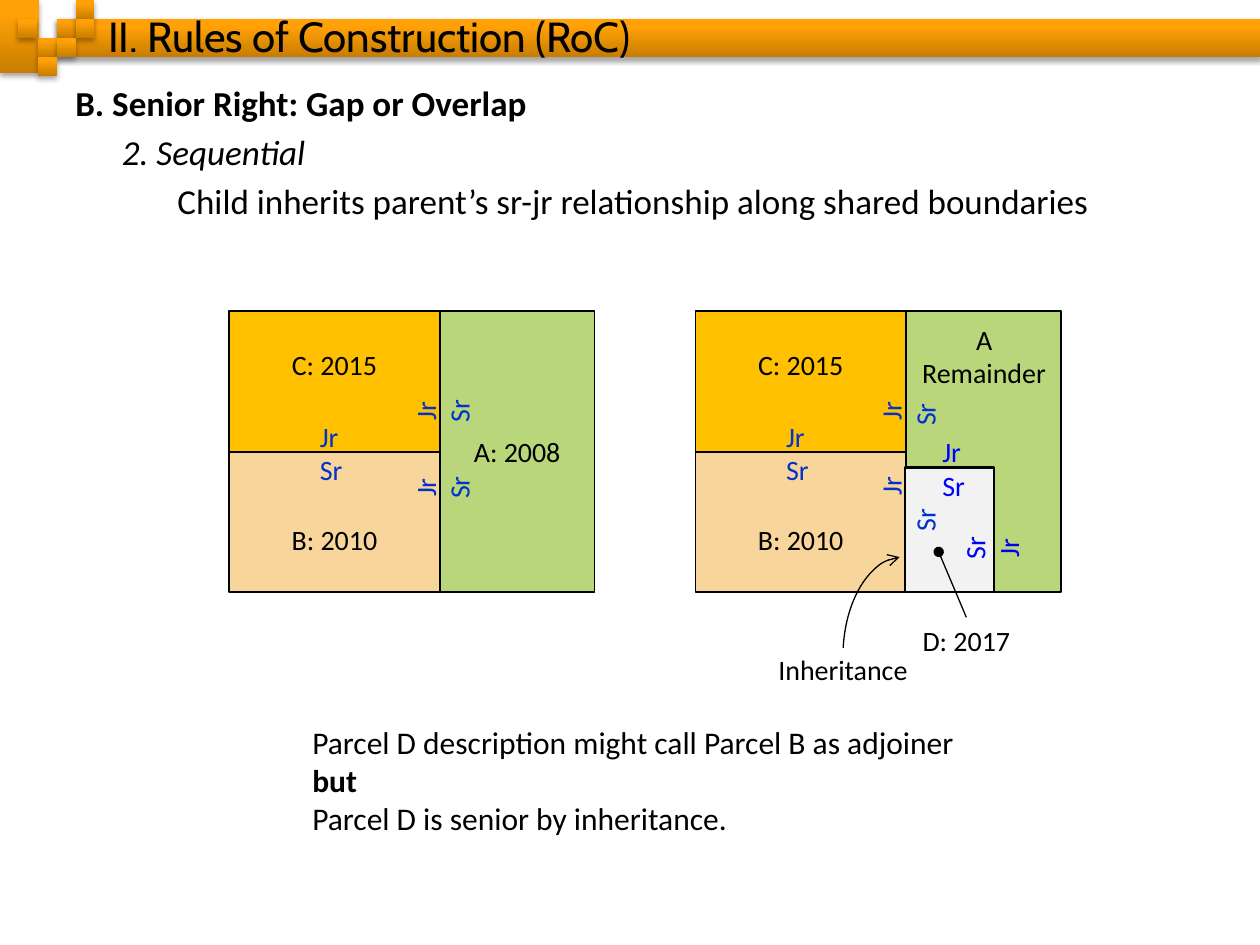
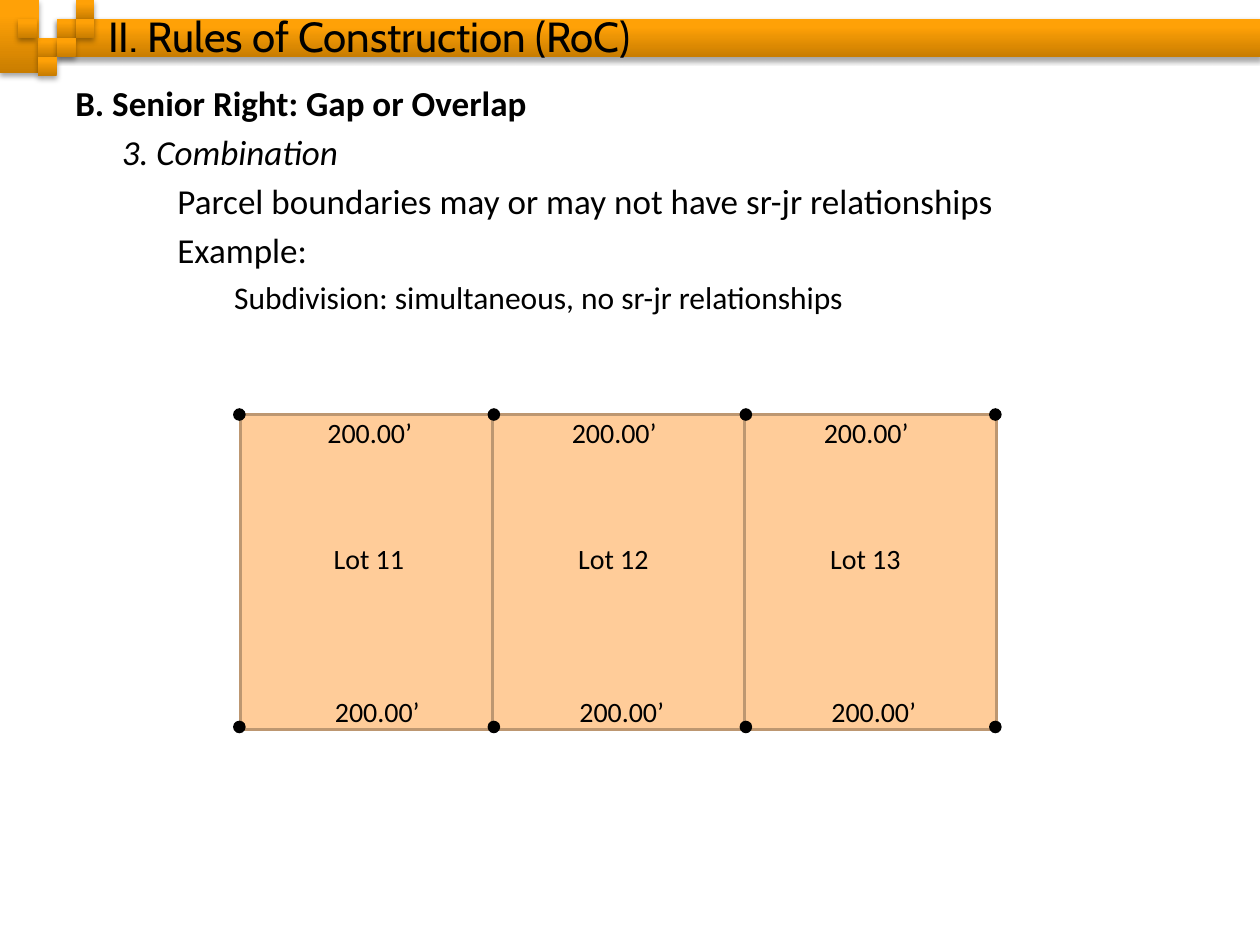
"""Build two slides on senior and junior rights between land parcels."""
from lxml import etree
from pptx import Presentation
from pptx.dml.color import RGBColor
from pptx.enum.shapes import MSO_CONNECTOR, MSO_SHAPE
from pptx.enum.text import MSO_ANCHOR, PP_ALIGN
from pptx.oxml.ns import qn
from pptx.util import Inches, Pt

RECT, OVAL, ARC = MSO_SHAPE.RECTANGLE, MSO_SHAPE.OVAL, MSO_SHAPE.ARC
STRAIGHT = MSO_CONNECTOR.STRAIGHT
LEFT, CENTER = PP_ALIGN.LEFT, PP_ALIGN.CENTER
TOP, MIDDLE = MSO_ANCHOR.TOP, MSO_ANCHOR.MIDDLE

COLORS = {
    "black": "000000",
    "band_dark": "C97D00",
    "band_light": "FFA107",
    "parcel_a": "B9D77A",
    "parcel_b": "F8D59B",
    "parcel_c": "FFC000",
    "parcel_d": "F2F2F2",
    "right": "0033CC",
    "new_right": "0000FF",
    "lot": "FFCC99",
    "lot_edge": "BD9771",
}
TITLE = "II. Rules of Construction (RoC)"
TOPIC = "B. Senior Right: Gap or Overlap"
SQUARE = 0.15
BAND_BOXES = [(0, 0, 0.31, 0.58), (0.45, 0.15, 9.55, 0.3)] + [
    (left, top, SQUARE, SQUARE)
    for left, top in [(0.45, 0.15), (0.6, 0), (0.6, 0.15), (0.3, 0.3),
                      (0.14, 0.15), (0.45, 0.3), (0.3, 0.45)]
]
OUTLINE = [
    {"bold": True},
    {"indent": 0.37, "italic": True},
    {"indent": 0.81},
    {"indent": 1.26, "size": 18},
]


def rgb(name):
    """Return the named colour."""
    return RGBColor.from_string(COLORS[name])


def write(frame, lines, *, size=16, font="Calibri", color="black", align=LEFT,
          anchor=TOP, wrap=False, before=0, top=0.05, bottom=0.05):
    """Fill a frame with lines, each a string or a (string, overrides) pair."""
    frame.word_wrap = wrap
    frame.vertical_anchor = anchor
    frame.margin_top, frame.margin_bottom = Inches(top), Inches(bottom)
    for number, line in enumerate(lines):
        words, own = (line, {}) if isinstance(line, str) else line
        paragraph = frame.add_paragraph() if number else frame.paragraphs[0]
        paragraph.alignment = align
        paragraph.space_before = Pt(before)
        paragraph._p.get_or_add_pPr().set("marL", str(Inches(own.get("indent", 0))))
        run = paragraph.add_run()
        run.text = words
        run.font.name = font
        run.font.size = Pt(own.get("size", size))
        run.font.bold = own.get("bold", False)
        run.font.italic = own.get("italic", False)
        run.font.color.rgb = rgb(color)


class Deck:
    """Hold the presentation, its style and the current slide."""

    def __init__(self):
        """Start an empty 10 by 7.5 inch presentation."""
        self.show = Presentation()
        self.show.slide_width, self.show.slide_height = Inches(10), Inches(7.5)

    def start(self, points):
        """Add a slide with band, title and (level, text) points."""
        self.slide = self.show.slides.add_slide(self.show.slide_layouts[6])
        for box in BAND_BOXES:
            self.band(*box)
        outline = [(words, OUTLINE[level]) for level, words in [(0, TOPIC), *points]]
        self.text(outline, 0.5, 0.6, 9, 6.34, size=20, before=4, wrap=True)
        self.text([TITLE], 0.76, 0, 9, 0.56, size=24, font="Cabin",
                  anchor=MIDDLE, wrap=True)

    def shape(self, kind, left, top, width, height, fill=None, line=None, weight=1):
        """Add a flat preset shape."""
        shape = self.slide.shapes.add_shape(
            kind, Inches(left), Inches(top), Inches(width), Inches(height))
        shape.shadow.inherit = False
        if fill:
            shape.fill.solid()
            shape.fill.fore_color.rgb = rgb(fill)
        else:
            shape.fill.background()
        if line:
            shape.line.color.rgb = rgb(line)
            shape.line.width = Pt(weight)
        else:
            shape.line.fill.background()
        return shape

    def band(self, left, top, width, height):
        """Add a shaded block of the header with a soft shadow."""
        block = self.shape(RECT, left, top, width, height)
        block.fill.gradient()
        block.fill.gradient_angle = 90
        stops = zip(block.fill.gradient_stops, ("band_dark", "band_light"), (0, 0.8))
        for stop, color, position in stops:
            stop.color.rgb = rgb(color)
            stop.position = position
        effects = block._element.spPr.find(qn("a:effectLst"))
        shadow = etree.SubElement(
            effects, qn("a:outerShdw"), blurRad=str(Pt(3.1)), dist=str(Pt(1.8)),
            dir="5400000", rotWithShape="0")
        tint = etree.SubElement(shadow, qn("a:srgbClr"), val=COLORS["black"])
        etree.SubElement(tint, qn("a:alpha"), val="35000")

    def text(self, lines, left, top, width, height, turn=0, **look):
        """Add a text box, turned by some degrees."""
        box = self.slide.shapes.add_textbox(
            Inches(left), Inches(top), Inches(width), Inches(height))
        box.rotation = turn
        write(box.text_frame, lines, **look)

    def upright(self, lines, x, y, color="right"):
        """Add labels that read upwards, centred on a point."""
        width, height = 0.38, 0.1 + 0.27 * len(lines)
        self.text(lines, x - width / 2, y - height / 2, width, height,
                  turn=270, align=CENTER, color=color)

    def parcel(self, name, box, fill, weight=1, **look):
        """Add an outlined parcel with its name inside."""
        parcel = self.shape(RECT, *box, fill, "black", weight)
        if name:
            write(parcel.text_frame, [name], align=CENTER, anchor=MIDDLE, **look)

    def tip(self, line, kind):
        """Put an end mark on a line."""
        edge = line._element.spPr.find(qn("a:ln"))
        etree.SubElement(edge, qn("a:tailEnd"), type=kind)

    def pointer(self, start, end):
        """Add a thin line ending in a dot."""
        pointer = self.slide.shapes.add_connector(
            STRAIGHT, *(Inches(value) for value in (*start, *end)))
        pointer.line.color.rgb = rgb("black")
        pointer.line.width = Pt(0.75)
        self.tip(pointer, "oval")
        etree.SubElement(pointer._element.spPr, qn("a:effectLst"))

    def curve(self, left, top, width, height, start, end):
        """Add a curved arrow between two angles in degrees."""
        curve = self.shape(ARC, left, top, width, height, line="black", weight=0.75)
        curve.adjustments[0], curve.adjustments[1] = start * 0.6, end * 0.6
        self.tip(curve, "arrow")

    def parcels(self, left, name_a):
        """Add parcels A, B and C with the rights between B and C."""
        top, width, height, inset = 2.47, 1.67, 1.115, 0.32
        self.parcel("C: 2015", (left, top, width, height), "parcel_c", bottom=inset)
        self.parcel(name_a, (left + width, top, 1.23, 2 * height), "parcel_a")
        self.parcel("B: 2010", (left, top + height, width, height), "parcel_b",
                    top=inset)
        self.text(["Jr", "Sr"], left + 0.62, 3.28, 0.38, 0.64, color="right")


def sequential(deck):
    """Draw the slide on inherited seniority."""
    deck.start([
        (1, "2. Sequential"),
        (2, "Child inherits parent’s sr-jr relationship along shared boundaries"),
    ])
    deck.parcels(1.82, "A: 2008")
    for y in (3.26, 3.87):
        deck.upright(["Jr", "Sr"], 3.51, y)

    deck.parcels(5.52, None)
    deck.parcel(None, (7.18, 3.71, 0.71, 0.99), "parcel_d", weight=1.25)
    for label, x, y in [("Jr", 7.07, 3.26), ("Jr", 7.07, 3.86),
                        ("Sr", 7.34, 3.29), ("Sr", 7.34, 4.13)]:
        deck.upright([label], x, y)
    deck.text(["A", "Remainder"], 7.22, 2.51, 1.18, 0.64, align=CENTER)
    deck.text(["Jr", "Sr"], 7.38, 3.4, 0.38, 0.64, color="new_right")
    deck.upright(["Sr", "Jr"], 7.87, 4.35, color="new_right")
    deck.text(["D: 2017"], 7.22, 4.9, 0.9, 0.37, align=CENTER)
    deck.pointer((7.67, 4.9), (7.45, 4.38))
    deck.curve(6.69, 4.42, 0.96, 1.59, 188.75, 267.87)
    deck.text(["Inheritance"], 6.08, 5.13, 1.23, 0.37)
    deck.text([
        "Parcel D description might call Parcel B as adjoiner",
        ("but", {"bold": True}),
        "Parcel D is senior by inheritance.",
    ], 2.38, 5.69, 5.69, 1, size=18, wrap=True)


def combination(deck):
    """Draw the slide on a subdivision of three lots."""
    deck.start([
        (1, "3. Combination"),
        (2, "Parcel boundaries may or may not have sr-jr relationships"),
        (2, "Example:"),
        (3, "Subdivision: simultaneous, no sr-jr relationships"),
    ])
    for column in range(3):
        deck.shape(RECT, 1.91 + 2 * column, 3.29, 2, 2.5, "lot", "lot_edge", 2)
    for number, left in enumerate((2.5, 4.44, 6.44), start=11):
        deck.text(["200.00’"], left, 3.25, 0.88, 0.37)
        deck.text([f"Lot {number}"], left + 0.05, 4.25, 0.77, 0.37)
        deck.text(["200.00’"], left + 0.06, 5.46, 0.88, 0.37)
    for left in (1.85, 3.87, 5.87, 7.85):
        for top in (3.24, 5.72):
            deck.shape(OVAL, left, top, 0.1, 0.1, "black")


def main():
    """Build and save the presentation."""
    deck = Deck()
    sequential(deck)
    combination(deck)
    deck.show.save("out.pptx")


if __name__ == "__main__":
    main()
